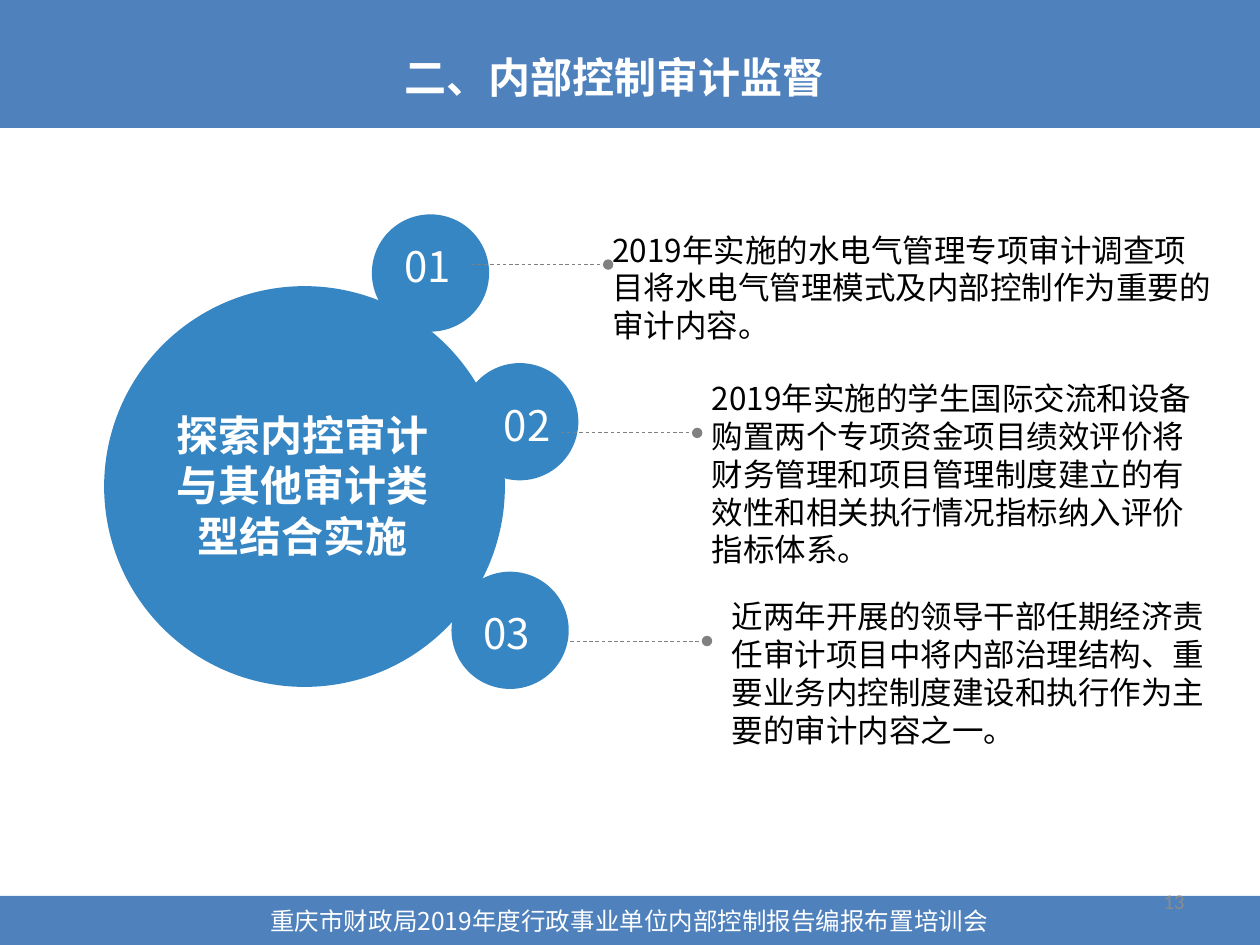
from lxml import etree
from pptx import Presentation
from pptx import util as u
from pptx.dml.color import RGBColor
from pptx.enum import dml, shapes, text
from pptx.oxml.ns import qn

COLORS = {
    "band": "4F81BD",
    "circle": "3786C4",
    "line": "808080",
    "number": "8C8C8C",
    "white": "FFFFFF",
    "black": "000000",
}
CJK = "Noto Sans CJK SC"
WIDTH, HEIGHT = 720, 540
SMALL = 67
LINE_LENGTH = 78


def color(name):
    return RGBColor.from_string(COLORS[name])


class SlideBuilder:
    def __init__(self, slide, font=CJK):
        self.slide = slide
        self.font = font

    def shape(self, kind, left, top, width, height, fill):
        shape = self.slide.shapes.add_shape(
            kind, u.Pt(left), u.Pt(top), u.Pt(width), u.Pt(height))
        shape.shadow.inherit = False
        shape.fill.solid()
        shape.fill.fore_color.rgb = color(fill)
        shape.line.fill.background()

    def band(self, top, height):
        self.shape(shapes.MSO_SHAPE.RECTANGLE, 0, top, WIDTH, height, "band")

    def circle(self, left, top, size):
        self.shape(shapes.MSO_SHAPE.OVAL, left, top, size, size, "circle")

    def text(self, content, left, top, width, height, size, ink="white", bold=False,
             align=text.PP_ALIGN.LEFT, wrap=True, font=None,
             anchor=text.MSO_ANCHOR.TOP):
        box = self.slide.shapes.add_textbox(
            u.Pt(left), u.Pt(top), u.Pt(width), u.Pt(height))
        frame = box.text_frame
        frame.word_wrap = wrap
        frame.vertical_anchor = anchor
        paragraph = frame.paragraphs[0]
        paragraph.alignment = align
        run = paragraph.add_run()
        run.text = content
        run.font.size = u.Pt(size)
        run.font.bold = bold
        run.font.color.rgb = color(ink)
        run.font.name = font or self.font
        east_asian = etree.SubElement(run.font._element, qn("a:ea"))
        east_asian.set("typeface", self.font)

    def leader(self, left, y):
        line = self.slide.shapes.add_connector(
            shapes.MSO_CONNECTOR.STRAIGHT,
            u.Pt(left), u.Pt(y), u.Pt(left + LINE_LENGTH), u.Pt(y))
        line.line.color.rgb = color("line")
        line.line.width = u.Pt(0.5)
        line.line.dash_style = dml.MSO_LINE.DASH
        # Round dot at the far end
        etree.SubElement(line.line._get_or_add_ln(), qn("a:tailEnd"), type="oval")
        etree.SubElement(line._element.spPr, qn("a:effectLst"))


def main():
    presentation = Presentation()
    presentation.slide_width = u.Pt(WIDTH)
    presentation.slide_height = u.Pt(HEIGHT)
    slide = presentation.slides.add_slide(presentation.slide_layouts[6])
    builder = SlideBuilder(slide)
    center = text.PP_ALIGN.CENTER

    # Header and footer bands, page number
    builder.band(0, 73.2)
    builder.band(512, 28)
    builder.text("13", 516, 500.5, 168, 28.8, 12, "number", font="Calibri",
                 align=text.PP_ALIGN.RIGHT, anchor=text.MSO_ANCHOR.MIDDLE)

    # Main circle
    builder.circle(59.5, 163.5, 229)
    builder.text("探索内控审计与其他审计类型结合实施", 82, 230.4, 181.4, 94.3, 24,
                 bold=True, align=center, font="Arial")

    # Numbered points: circle, number, leader line start, description box
    points = [
        ((212.5, 122.5), (223.9, 133.9), (269.5, 151.2), (342.7, 128.2, 356.4, 49),
         "2019年实施的水电气管理专项审计调查项目将水电气管理模式及内部控制作为重要的审计内容。"),
        ((263.5, 207.5), (280.8, 224.6), (320.4, 247.4), (399.6, 213.1, 300.2, 62),
         "2019年实施的学生国际交流和设备购置两个专项资金项目绩效评价将财务管理"
         "和项目管理制度建立的有效性和相关执行情况指标纳入评价指标体系。"),
        ((258, 326.7), (269.3, 343.4), (326, 366.3), (411.1, 337.7, 285.8, 96.5),
         "近两年开展的领导干部任期经济责任审计项目中将内部治理结构、"
         "重要业务内控制度建设和执行作为主要的审计内容之一。"),
    ]
    for index, (circle, number, leader, box, description) in enumerate(points, 1):
        builder.circle(*circle, SMALL)
        builder.text(f"{index:02}", *number, 43.2, 36, 24, wrap=False)
        builder.leader(*leader)
        builder.text(description, *box, 18, "black")

    # Title and footer text
    builder.text("二、内部控制审计监督", 223.9, 25.9, 257, 36, 24, bold=True, wrap=False)
    builder.text("重庆市财政局2019年度行政事业单位内部控制报告编报布置培训会",
                 126.7, 514.1, 465.8, 24.5, 14, align=center)

    presentation.save("out.pptx")


if __name__ == "__main__":
    main()
